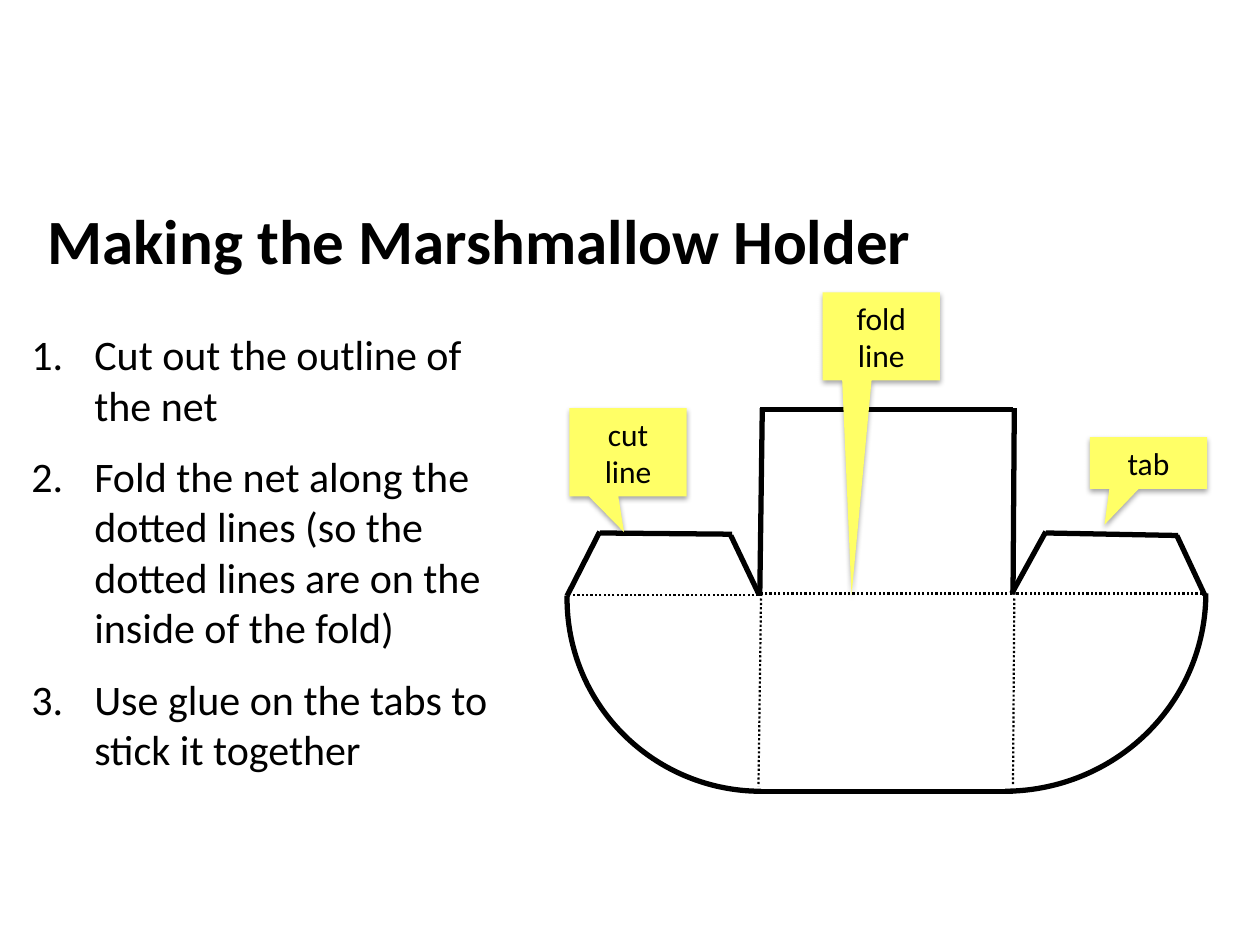
from dataclasses import dataclass

import lxml.etree
import pptx
import pptx.dml.color
import pptx.enum.dml
import pptx.enum.shapes
import pptx.enum.text
import pptx.oxml.ns
import pptx.util

Inches = pptx.util.Inches
Pt = pptx.util.Pt
qn = pptx.oxml.ns.qn


@dataclass(frozen=True)
class Theme:
    font: str = "Calibri"
    ink: str = "000000"
    note: str = "FFFF66"
    title_size: int = 36
    step_size: int = 24
    note_size: int = 18
    cut_width: float = 3
    fold_width: float = 1.25


THEME = Theme()

STEPS = [
    "Cut out the outline of the net",
    "Fold the net along the dotted lines (so the dotted lines are on the inside of the fold)",
    "Use glue on the tabs to stick it together",
]
CUT_LINES = [
    (9.35, 4.25, 8.3, 4.23),
    (9.56, 4.72, 9.34, 4.25),
    (8.3, 4.22, 8.03, 4.71),
    (5.81, 4.24, 4.76, 4.23),
    (6.02, 4.71, 5.8, 4.25),
    (4.76, 4.22, 4.5, 4.73),
    (8.04, 6.28, 6.03, 6.28),
    (8.04, 3.25, 6.03, 3.25),
    (8.05, 3.24, 8.04, 4.72),
    (6.05, 3.24, 6.03, 4.73),
]
FOLD_LINES = [
    (6.02, 4.72, 4.54, 4.72),
    (8.03, 4.71, 6.03, 4.71),
    (9.54, 4.71, 8.05, 4.71),
    (6.04, 4.75, 6.02, 6.24),
    (8.05, 4.75, 8.04, 6.23),
]
CUT_ARCS = [
    ((4.5, 3.22, 3.08, 3.06), 180, (162, 0.53)),
    ((6.4, 3.11, 3.14, 3.2), 90, (162, 215.83)),
]
CALLOUTS = [
    ("tab", (8.65, 3.47, 0.93, 0.41), (-0.375, 1.193)),
    ("cut line", (4.52, 3.24, 0.93, 0.7), (-0.034, 0.905)),
    ("fold line", (6.53, 2.32, 0.93, 0.7), (-0.254, 2.938)),
]


def color(value):
    return pptx.dml.color.RGBColor.from_string(value)


def style_text(paragraph, size, bold=False):
    paragraph.font.name = THEME.font
    paragraph.font.size = Pt(size)
    paragraph.font.bold = bold
    paragraph.font.color.rgb = color(THEME.ink)


def style_line(line, width):
    line.color.rgb = color(THEME.ink)
    line.width = Pt(width)


def add_text_box(page, place):
    box = page.shapes.add_textbox(*map(Inches, place))
    box.text_frame.word_wrap = True
    return box.text_frame


def add_title(page):
    para = add_text_box(page, (0.28, 1.55, 9.29, 0.71)).paragraphs[0]
    para.text = "Making the Marshmallow Holder"
    style_text(para, THEME.title_size, bold=True)


def add_steps(page):
    frame = add_text_box(page, (0.15, 2.56, 4.11, 3.67))
    for index, step in enumerate(STEPS):
        para = frame.add_paragraph() if index else frame.paragraphs[0]
        para.text = step
        para.space_before = Pt(6 if index else 0)
        para.space_after = Pt(6)
        properties = para._p.get_or_add_pPr()
        properties.set("marL", str(Inches(0.5)))
        properties.set("indent", str(Inches(-0.5)))
        lxml.etree.SubElement(properties, qn("a:buAutoNum"), type="arabicPeriod")
        style_text(para, THEME.step_size)


def add_line(page, ends, width, dash=None):
    connector = page.shapes.add_connector(
        pptx.enum.shapes.MSO_CONNECTOR.STRAIGHT, *map(Inches, ends))
    style_line(connector.line, width)
    if dash is not None:
        connector.line.dash_style = dash
    lxml.etree.SubElement(connector._element.spPr, qn("a:effectLst"))


def add_preset(page, kind, place, adjustments):
    shape = page.shapes.add_shape(kind, *map(Inches, place))
    shape.shadow.inherit = False
    for index, value in enumerate(adjustments):
        shape.adjustments[index] = value
    return shape


def add_arc(page, place, rotation, angles):
    arc = add_preset(page, pptx.enum.shapes.MSO_SHAPE.ARC, place, angles)
    arc.rotation = rotation
    arc.fill.background()
    style_line(arc.line, THEME.cut_width)


def add_shadow(shape):
    effects = shape._element.spPr.find(qn("a:effectLst"))
    shadow = lxml.etree.SubElement(
        effects, qn("a:outerShdw"), blurRad=str(Pt(3.1)), dist=str(Pt(1.8)),
        dir="5400000", rotWithShape="0")
    tint = lxml.etree.SubElement(shadow, qn("a:srgbClr"), val=THEME.ink)
    lxml.etree.SubElement(tint, qn("a:alpha"), val="35000")


def add_callout(page, label, place, tip):
    callout = add_preset(
        page, pptx.enum.shapes.MSO_SHAPE.RECTANGULAR_CALLOUT, place, tip)
    callout.fill.solid()
    callout.fill.fore_color.rgb = color(THEME.note)
    callout.line.fill.background()
    add_shadow(callout)
    frame = callout.text_frame
    frame.word_wrap = True
    frame.vertical_anchor = pptx.enum.text.MSO_ANCHOR.MIDDLE
    para = frame.paragraphs[0]
    para.text = label
    para.alignment = pptx.enum.text.PP_ALIGN.CENTER
    style_text(para, THEME.note_size)


def main():
    deck = pptx.Presentation()
    deck.slide_width = Inches(10)
    deck.slide_height = Inches(7.5)
    page = deck.slides.add_slide(deck.slide_layouts[6])
    add_title(page)
    for ends in CUT_LINES:
        add_line(page, ends, THEME.cut_width)
    for arc in CUT_ARCS:
        add_arc(page, *arc)
    for ends in FOLD_LINES:
        add_line(page, ends, THEME.fold_width, pptx.enum.dml.MSO_LINE.ROUND_DOT)
    for callout in CALLOUTS:
        add_callout(page, *callout)
    add_steps(page)
    deck.save("out.pptx")


if __name__ == "__main__":
    main()
